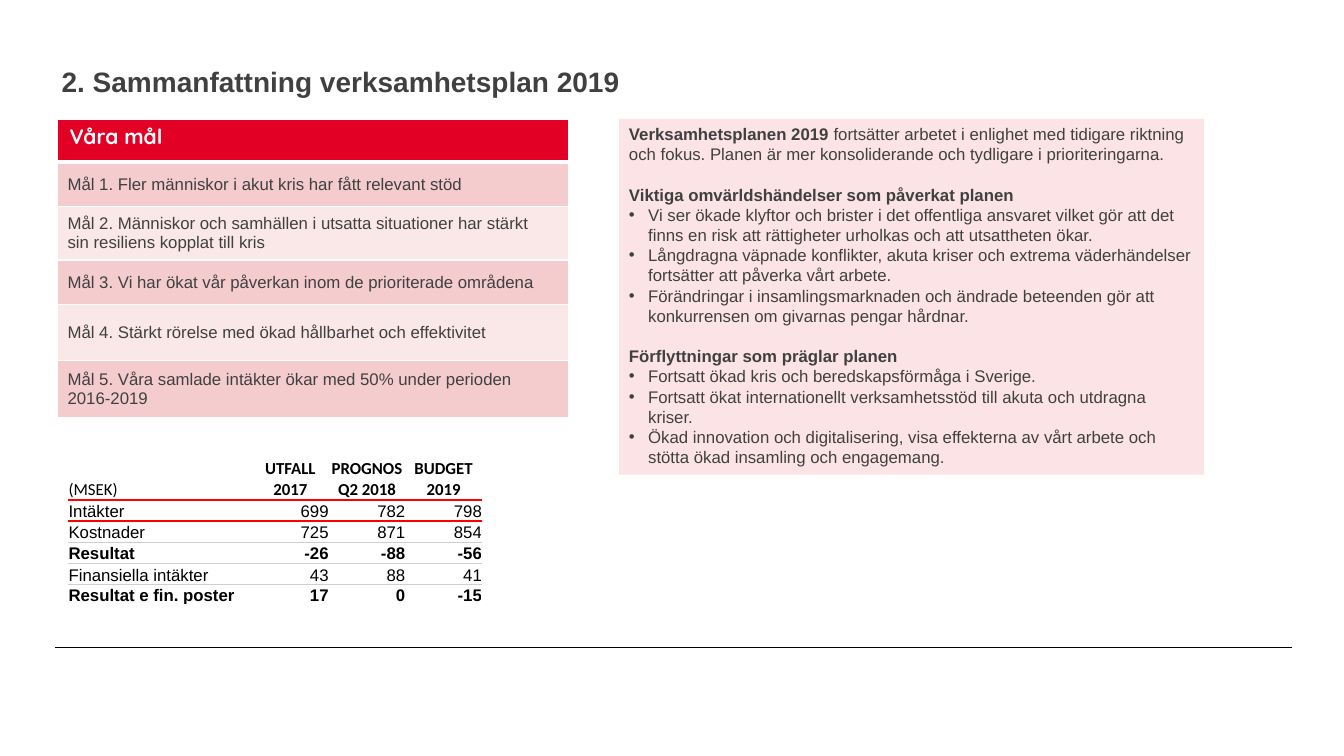
"""Build the summary slide for the 2019 operational plan."""
from lxml.etree import SubElement
from pptx import Presentation
from pptx.dml.color import RGBColor
from pptx.enum.shapes import MSO_CONNECTOR, MSO_SHAPE
from pptx.enum.text import MSO_ANCHOR, PP_ALIGN
from pptx.oxml.ns import qn
from pptx.util import Inches, Pt

TITLE = "2. Sammanfattning verksamhetsplan 2019"
GOALS_HEADING = "Våra mål"
GOALS = [
    ("Mål 1. Fler människor i akut kris har fått relevant stöd", 0.44),
    ("Mål 2. Människor och samhällen i utsatta situationer har stärkt\vsin resiliens kopplat till kris", 0.53),
    ("Mål 3. Vi har ökat vår påverkan inom de prioriterade områdena", 0.44),
    ("Mål 4. Stärkt rörelse med ökad hållbarhet och effektivitet", 0.56),
    ("Mål 5. Våra samlade intäkter ökar med 50% under perioden 2016-2019", 0.56),
]
INTRODUCTION = (
    "Verksamhetsplanen 2019 ",
    "fortsätter arbetet i enlighet med tidigare riktning och fokus. "
    "Planen är mer konsoliderande och tydligare i prioriteringarna.",
)
SECTIONS = {
    "Viktiga omvärldshändelser som påverkat planen": [
        "Vi ser ökade klyftor och brister i det offentliga ansvaret vilket gör att det "
        "finns en risk att rättigheter urholkas och att utsattheten ökar.",
        "Långdragna väpnade konflikter, akuta kriser och extrema väderhändelser "
        "fortsätter att påverka vårt arbete.",
        "Förändringar i insamlingsmarknaden och ändrade beteenden gör att "
        "konkurrensen om givarnas pengar hårdnar.",
    ],
    "Förflyttningar som präglar planen": [
        "Fortsatt ökad kris och beredskapsförmåga i Sverige.",
        "Fortsatt ökat internationellt verksamhetsstöd till akuta och utdragna kriser.",
        "Ökad innovation och digitalisering, visa effekterna av vårt arbete och "
        "stötta ökad insamling och engagemang.",
    ],
}
BUDGET = [
    ("(MSEK)", "UTFALL 2017", "PROGNOS Q2 2018", "BUDGET 2019"),
    ("Intäkter", "699", "782", "798"),
    ("Kostnader", "725", "871", "854"),
    ("Resultat", "-26", "-88", "-56"),
    ("Finansiella intäkter", "43", "88", "41"),
    ("Resultat e fin. poster", "17", "0", "-15"),
]
BUDGET_ROW_HEIGHTS = [0.41, 0.21, 0.21, 0.21, 0.21, 0.2]
BUDGET_COLUMN_WIDTHS = [1.82, 0.76, 0.76, 0.76]
BOLD_ROWS = (3, 5)
ROW_RULES = {0: ("FF0000", 1.5), 2: ("D0CECE", 1), 3: ("D0CECE", 1), 4: ("D0CECE", 1)}
GRAY, BLACK, WHITE = "404040", "000000", "FFFFFF"


def color(value):
    return RGBColor.from_string(value)


def style(font, size, value, bold=False, name="Arial"):
    font.name, font.size, font.bold = name, Pt(size), bold
    font.color.rgb = color(value)


def set_border(cell, side, value, width):
    properties = cell._tc.get_or_add_tcPr()
    line = SubElement(properties, qn(f"a:ln{side}"), w=str(Pt(width)))
    fill = SubElement(line, qn("a:solidFill"))
    SubElement(fill, qn("a:srgbClr"), val=value)


def set_margins(frame, left, top, right, bottom):
    frame.margin_left, frame.margin_top = Inches(left), Inches(top)
    frame.margin_right, frame.margin_bottom = Inches(right), Inches(bottom)


def add_plain_table(slide, left, top, widths, heights):
    box = [Inches(value) for value in (left, top, sum(widths), sum(heights))]
    table = slide.shapes.add_table(len(heights), len(widths), *box).table
    table.first_row = table.horz_banding = False
    for column, width in zip(table.columns, widths):
        column.width = Inches(width)
    for row, height in zip(table.rows, heights):
        row.height = Inches(height)
    return table


def add_title(slide):
    title = slide.shapes.title
    title.left, title.top = Inches(0.57), Inches(0.63)
    title.width, title.height = Inches(12.02), Inches(0.39)
    frame = title.text_frame
    frame.text = TITLE
    frame.vertical_anchor = MSO_ANCHOR.MIDDLE
    set_margins(frame, 0.04, 0.05, 0.1, 0.05)
    paragraph = frame.paragraphs[0]
    paragraph.alignment, paragraph.line_spacing = PP_ALIGN.LEFT, 0.9
    style(paragraph.font, 20, GRAY, True)


def add_goals(slide):
    rows = [(GOALS_HEADING, 0.43), *GOALS]
    table = add_plain_table(slide, 0.57, 1.18, [5.07], [height for _, height in rows])
    for index, (text, _) in enumerate(rows):
        cell = table.cell(index, 0)
        cell.text = text
        font = cell.text_frame.paragraphs[0].font
        for side in "LRTB":
            heavy = (index, side) in ((0, "B"), (1, "T"))
            set_border(cell, side, WHITE, 3 if heavy else 1)
        cell.fill.solid()
        if index == 0:
            cell.margin_left = Inches(0.12)
            cell.fill.fore_color.rgb = color("E20025")
            style(font, 15, WHITE, True, "Quicksand")
        else:
            cell.vertical_anchor = MSO_ANCHOR.MIDDLE
            cell.fill.fore_color.rgb = color("F4CCCD" if index % 2 else "FAE7E8")
            style(font, 12, GRAY)


def add_bullet(paragraph):
    properties = paragraph._p.get_or_add_pPr()
    properties.set("marL", str(Inches(0.19)))
    properties.set("indent", str(-Inches(0.19)))
    SubElement(properties, qn("a:buFont"), typeface="Arial")
    SubElement(properties, qn("a:buChar"), char="•")


def add_plan(slide):
    panel = slide.shapes.add_shape(
        MSO_SHAPE.RECTANGLE, Inches(6.14), Inches(1.18), Inches(5.8), Inches(3.53))
    panel.shadow.inherit = False
    panel.fill.solid()
    panel.fill.fore_color.rgb = color("FCE4E6")
    panel.line.fill.background()
    frame = panel.text_frame
    frame.word_wrap, frame.vertical_anchor = True, MSO_ANCHOR.TOP
    paragraph = frame.paragraphs[0]
    for text, bold in zip(INTRODUCTION, (True, False)):
        run = paragraph.add_run()
        run.text = text
        style(run.font, 12, GRAY, bold)
    for heading, points in SECTIONS.items():
        paragraph = frame.add_paragraph()
        paragraph.text, paragraph.space_before = heading, Pt(14.5)
        style(paragraph.font, 12, GRAY, True)
        for point in points:
            paragraph = frame.add_paragraph()
            paragraph.text = point
            add_bullet(paragraph)
            style(paragraph.font, 12, GRAY)
    for paragraph in frame.paragraphs:
        paragraph.alignment = PP_ALIGN.LEFT


def add_budget(slide):
    table = add_plain_table(slide, 0.68, 4.55, BUDGET_COLUMN_WIDTHS, BUDGET_ROW_HEIGHTS)
    for row, values in enumerate(BUDGET):
        for column, value in enumerate(values):
            cell = table.cell(row, column)
            cell.text = value
            set_margins(cell, 0, 0, 0, 0)
            header = row == 0 and column > 0
            cell.vertical_anchor = MSO_ANCHOR.MIDDLE if header else MSO_ANCHOR.BOTTOM
            paragraph = cell.text_frame.paragraphs[0]
            if column:
                paragraph.alignment = PP_ALIGN.CENTER if header else PP_ALIGN.RIGHT
            style(paragraph.font, 12, BLACK, header or row in BOLD_ROWS,
                  "Arial" if row else "Calibri")
            for side, rule_row in (("T", row - 1), ("B", row)):
                if rule_row in ROW_RULES:
                    set_border(cell, side, *ROW_RULES[rule_row])
            cell.fill.background()


def add_footer_line(slide):
    line = slide.shapes.add_connector(
        MSO_CONNECTOR.STRAIGHT, Inches(0.55), Inches(6.42), Inches(12.81), Inches(6.42))
    line.line.color.rgb, line.line.width = color(BLACK), Pt(0.5)
    SubElement(line._element.spPr, qn("a:effectLst"))


def main():
    presentation = Presentation()
    presentation.slide_width, presentation.slide_height = Inches(13.33), Inches(7.5)
    slide = presentation.slides.add_slide(presentation.slide_layouts[5])
    add_footer_line(slide)
    add_title(slide)
    add_goals(slide)
    add_plan(slide)
    add_budget(slide)
    presentation.save("out.pptx")


if __name__ == "__main__":
    main()
